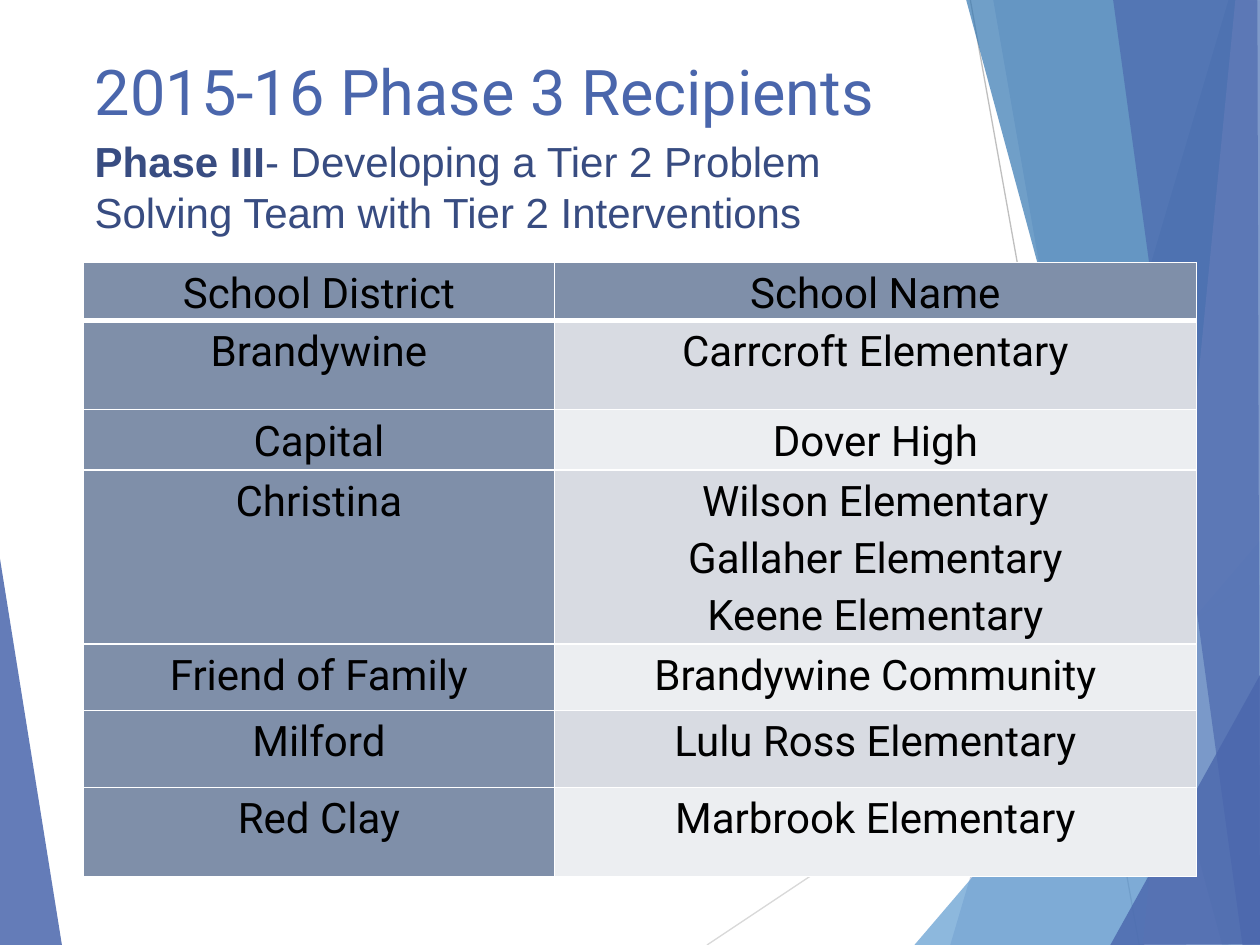
from lxml.etree import SubElement
from pptx import Presentation
from pptx.dml.color import RGBColor
from pptx.enum.shapes import MSO_CONNECTOR
from pptx.enum.text import MSO_ANCHOR, MSO_AUTO_SIZE, PP_ALIGN
from pptx.oxml.ns import qn
from pptx.util import Pt

COLORS = {
    "indigo": "4A66AC", "navy": "384C81", "sky": "629DD1", "blue": "3477B2",
    "lavender": "90A2CF", "slate": "7F8FA9", "band_dark": "D8DBE2",
    "band_light": "ECEEF1", "black": "000000", "white": "FFFFFF",
    "hairline_light": "D9D9D9", "hairline_dark": "BFBFBF",
}

# Facets: colour, opacity in percent, outline in points
LEFT_FACET = ("indigo", 85, [(-0.5, 316), (35.5, 540.5), (-0.5, 540)])
RIGHT_FACETS = [
    ("indigo", 30, [(702, 0), (543, 540), (721, 540.5), (720.5, 0.5)]),
    ("indigo", 20, [(567.5, -0.5), (661.5, 540), (720.5, 540), (720.5, -0.5)]),
    ("sky", 72, [(522.5, 540), (720, 309), (720.5, 540)]),
    ("blue", 70, [(552, -0.5), (698.5, 540), (720.5, 539.5), (720.5, -0.5)]),
    ("lavender", 70, [(706, -0.5), (653, 540), (720.5, 540), (720, -0.5)]),
    ("indigo", 65, [(636, -0.5), (710, 540), (720, 540), (718.5, -0.5)]),
    ("indigo", 80, [(634.5, 540), (720.5, 385), (720.5, 539.5)]),
]
HAIRLINES = [
    ("hairline_light", (404, 540), (720.5, 329)),
    ("hairline_dark", (554.5, 0), (651, 540)),
]

RECIPIENTS = [
    ("School District", ["School Name"]),
    ("Brandywine", ["Carrcroft Elementary"]),
    ("Capital", ["Dover High"]),
    ("Christina", ["Wilson Elementary", "Gallaher Elementary", "Keene Elementary"]),
    ("Friend of Family", ["Brandywine Community"]),
    ("Milford", ["Lulu Ross Elementary"]),
    ("Red Clay", ["Marbrook Elementary"]),
]
COLUMN_WIDTHS = [269, 367]
ROW_HEIGHTS = [26, 51, 34.5, 77, 38, 44, 51]


def rgb(name):
    return RGBColor.from_string(COLORS[name])


def write(paragraph, text, size=24, font="Roboto", color="black", bold=False,
          align=PP_ALIGN.LEFT, spacing=None):
    run = paragraph.add_run()
    run.text = text
    run.font.size = Pt(size)
    run.font.name = font
    run.font.bold = bold
    run.font.color.rgb = rgb(color)
    paragraph.alignment = align
    if spacing:
        paragraph.line_spacing = spacing


def place(shape, box):
    shape.left, shape.top, shape.width, shape.height = map(Pt, box)


def draw_facet(slide, box, color, opacity, outline):
    points = [(Pt(box[0] + x), Pt(box[1] + y)) for x, y in outline]
    builder = slide.shapes.build_freeform(*points[0])
    builder.add_line_segments(points[1:], close=True)
    facet = builder.convert_to_shape()
    facet.shadow.inherit = False
    facet.line.fill.background()
    facet.fill.solid()
    facet.fill.fore_color.rgb = rgb(color)
    color_xml = facet.element.spPr.find(qn("a:solidFill"))[0]
    SubElement(color_xml, qn("a:alpha")).set("val", str(opacity * 1000))


def draw_backdrop(slide, box):
    left, top = box[:2]
    draw_facet(slide, box, *LEFT_FACET)
    for color, (x1, y1), (x2, y2) in HAIRLINES:
        hairline = slide.shapes.add_connector(
            MSO_CONNECTOR.STRAIGHT, Pt(left + x1), Pt(top + y1),
            Pt(left + x2), Pt(top + y2))
        hairline.line.color.rgb = rgb(color)
        hairline.line.width = Pt(0.75)
        SubElement(hairline.element.spPr, qn("a:effectLst"))
    for facet in RIGHT_FACETS:
        draw_facet(slide, box, *facet)


def add_heading(slide, box):
    left, top, width, height = box
    # Title, brought in front of the backdrop
    title = slide.shapes.title
    title.element.getparent().append(title.element)
    place(title, (left, top, width, 90))
    title.text_frame.vertical_anchor = MSO_ANCHOR.TOP
    title.text_frame.word_wrap = True
    write(title.text_frame.paragraphs[0], "2015-16 Phase 3 Recipients",
          size=36, color="indigo")

    # Phase description
    phase = slide.shapes.add_textbox(Pt(left), Pt(top + 47.5), Pt(492), Pt(height - 47.5))
    phase.text_frame.word_wrap = True
    phase.text_frame.auto_size = MSO_AUTO_SIZE.SHAPE_TO_FIT_TEXT
    line = phase.text_frame.paragraphs[0]
    write(line, "Phase III", font="Arial", color="navy", bold=True)
    write(line, "- Developing a Tier 2 Problem Solving Team with Tier 2 Interventions",
          font="Arial", color="navy")


def set_borders(cell, bottom=1):
    properties = cell._tc.get_or_add_tcPr()
    widths = {"a:lnL": 1, "a:lnR": 1, "a:lnT": 1, "a:lnB": bottom}
    for position, (tag, width) in enumerate(widths.items()):
        border = SubElement(properties, qn(tag), w=str(Pt(width)))
        fill = SubElement(border, qn("a:solidFill"))
        SubElement(fill, qn("a:srgbClr"), val=COLORS["white"])
        properties.insert(position, border)


def fill_cell(cell, lines, color, bottom):
    cell.margin_left = cell.margin_right = Pt(5)
    cell.margin_top = cell.margin_bottom = 0
    cell.fill.solid()
    cell.fill.fore_color.rgb = rgb(color)
    set_borders(cell, bottom)
    for index, text in enumerate(lines):
        frame = cell.text_frame
        paragraph = frame.add_paragraph() if index else frame.paragraphs[0]
        write(paragraph, text, align=PP_ALIGN.CENTER, spacing=1.15)


def add_recipients(slide, box):
    frame = slide.shapes.add_table(len(RECIPIENTS), 2, *map(Pt, box))
    table = frame.table
    table.first_row = table.horz_banding = False
    for column, width in zip(table.columns, COLUMN_WIDTHS):
        column.width = Pt(width)
    for index, (district, schools) in enumerate(RECIPIENTS):
        table.rows[index].height = Pt(ROW_HEIGHTS[index])
        band = "band_dark" if index % 2 else "band_light"
        bottom = 1 if index else 3
        fill_cell(table.cell(index, 0), [district], "slate", bottom)
        fill_cell(table.cell(index, 1), schools, band if index else "slate", bottom)
    place(frame, box)


def main():
    deck = Presentation()
    deck.slide_width, deck.slide_height = Pt(720), Pt(540)
    slide = deck.slides.add_slide(deck.slide_layouts[5])
    draw_backdrop(slide, (0, 0, 720, 540))
    add_heading(slide, (47, 26.5, 648, 142))
    add_recipients(slide, (47.75, 150, 636, 352))
    deck.save("out.pptx")


if __name__ == "__main__":
    main()
